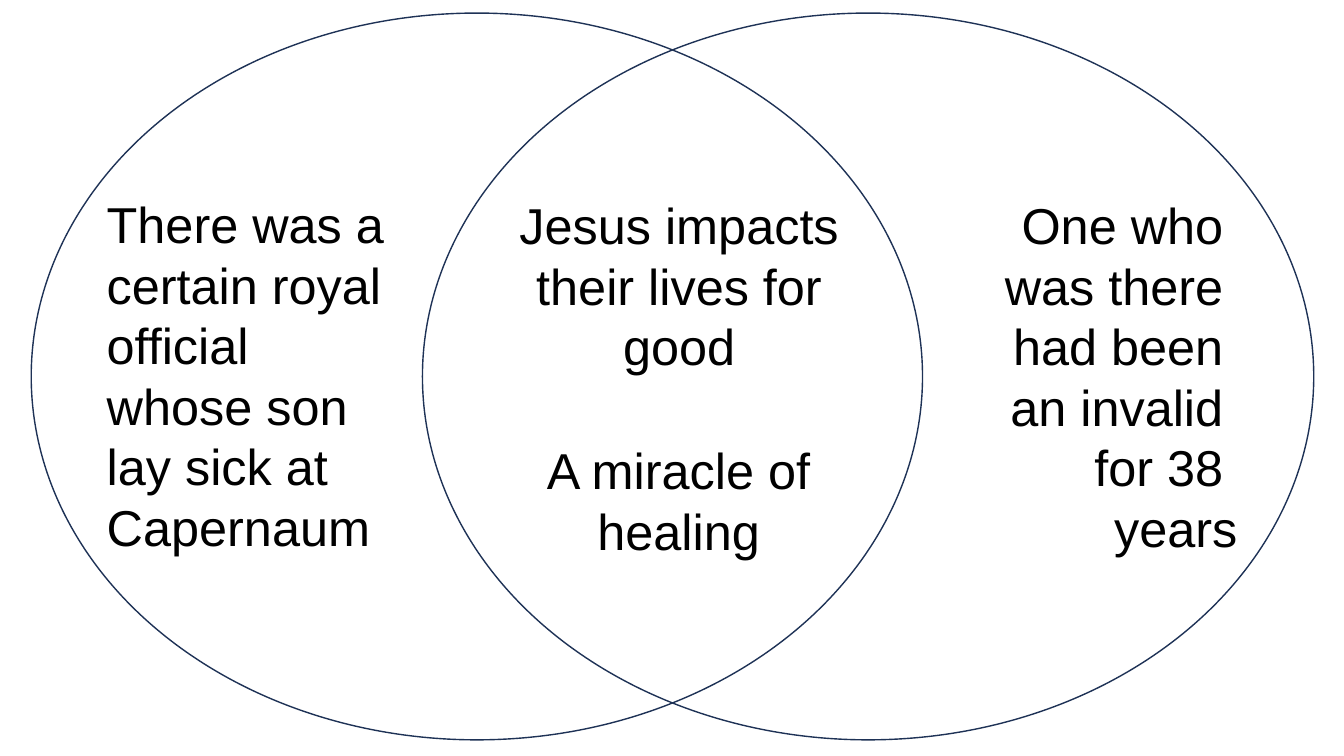
import pptx
import pptx.dml.color
import pptx.enum.shapes
import pptx.enum.text
import pptx.util
from pptx.util import Inches

COLOURS = {"text": "000000", "outline": "1E3256"}
FONT = {"name": "Arial", "size": pptx.util.Pt(36)}
ALIGN = pptx.enum.text.PP_ALIGN
BLANK_LAYOUT = 6


def colour(name):
    return pptx.dml.color.RGBColor.from_string(COLOURS[name])


class VennSlide:
    def __init__(self, presentation):
        self.slide = presentation.slides.add_slide(presentation.slide_layouts[BLANK_LAYOUT])

    def add_circle(self, left, top, width, height):
        shape = self.slide.shapes.add_shape(
            pptx.enum.shapes.MSO_SHAPE.OVAL,
            Inches(left), Inches(top), Inches(width), Inches(height))
        shape.shadow.inherit = False
        shape.fill.background()
        shape.line.color.rgb = colour("outline")
        shape.line.width = pptx.util.Pt(1)

    def add_text(self, left, top, width, height, lines, alignment):
        shape = self.slide.shapes.add_textbox(
            Inches(left), Inches(top), Inches(width), Inches(height))
        frame = shape.text_frame
        frame.word_wrap = True
        frame.auto_size = pptx.enum.text.MSO_AUTO_SIZE.SHAPE_TO_FIT_TEXT
        frame.text = "\n".join(lines)
        for paragraph in frame.paragraphs:
            paragraph.alignment = alignment
            for run in paragraph.runs:
                for attribute, value in FONT.items():
                    setattr(run.font, attribute, value)
                run.font.color.rgb = colour("text")


def main():
    presentation = pptx.Presentation()
    presentation.slide_width = Inches(13.33)
    presentation.slide_height = Inches(7.5)
    venn = VennSlide(presentation)

    official = ["There was a certain royal official", "whose son",
                "lay sick at Capernaum"]
    # The space after each line but the last sets it in from the right edge.
    invalid = ["One who ", "was there ", "had been ", "an invalid ", "for 38 ", "years"]
    venn.add_text(0.96, 1.87, 3.59, 3.74, official, ALIGN.LEFT)
    venn.add_text(8.78, 1.88, 3.59, 3.74, invalid, ALIGN.RIGHT)

    for left in (0.31, 4.19):
        venn.add_circle(left, 0.13, 8.84, 7.21)

    venn.add_text(4.94, 1.88, 3.59, 1.92,
                  ["Jesus impacts their lives for good"], ALIGN.CENTER)
    venn.add_text(5.29, 4.31, 2.88, 1.31, ["A miracle of healing"], ALIGN.CENTER)

    presentation.save("out.pptx")


if __name__ == "__main__":
    main()
